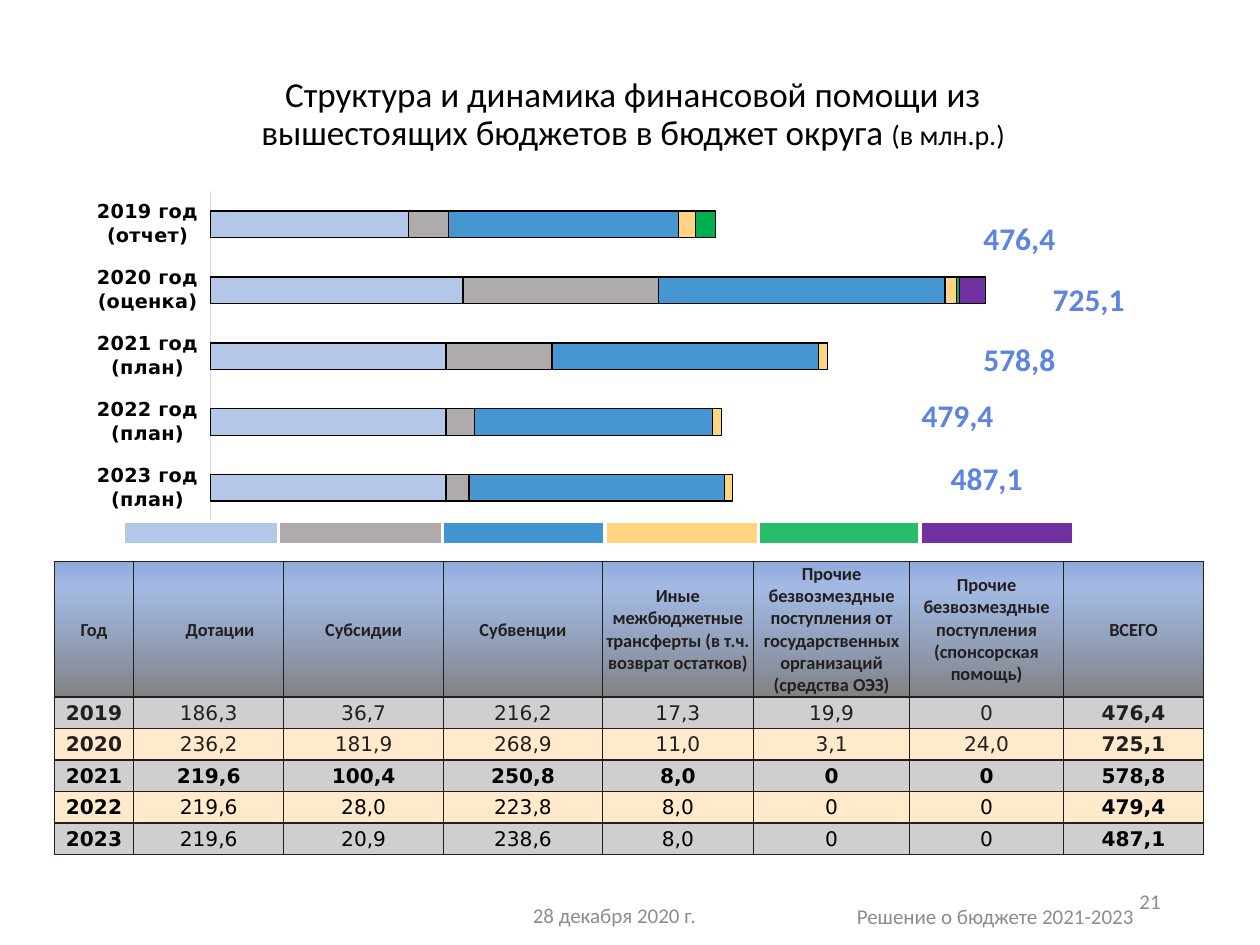
from lxml import etree
from pptx import Presentation
from pptx.chart.data import CategoryChartData
from pptx.dml.color import RGBColor
from pptx.enum.chart import XL_CHART_TYPE, XL_TICK_LABEL_POSITION, XL_TICK_MARK
from pptx.enum.text import MSO_ANCHOR, PP_ALIGN
from pptx.oxml import parse_xml
from pptx.oxml.ns import nsdecls, qn
from pptx.util import Pt

LEFT, CENTER, RIGHT = PP_ALIGN.LEFT, PP_ALIGN.CENTER, PP_ALIGN.RIGHT
MIDDLE, BOTTOM = MSO_ANCHOR.MIDDLE, MSO_ANCHOR.BOTTOM
BAR_STACKED = XL_CHART_TYPE.BAR_STACKED
NO_TICK, LABELS_LOW = XL_TICK_MARK.NONE, XL_TICK_LABEL_POSITION.LOW

COLORS = {
    "black": "000000", "ink": "231F20", "footer": "8C8C8C", "total": "5D84E2",
    "white": "FFFFFF", "axis": "D9D9D9", "odd": "D0CECE", "even": "FFEACC",
    "grants": "B4C7E7", "subsidies": "AFABAB", "subventions": "0070C0",
    "transfers": "FFCC66", "state": "00B050", "sponsors": "7030A0",
}
BODY, DATA = "Calibri", "DejaVu Sans"

YEARS = ["2023 год (план)", "2022 год (план)", "2021 год (план)",
         "2020 год (оценка)", "2019 год (отчет)"]
# colour name, opacity in the chart, opacity in the legend strip, values
SERIES = [
    ("grants", 100, 100, [82, 82, 82, 88, 69]),
    ("subsidies", 100, 100, [8, 10, 37, 68, 14]),
    ("subventions", 73, 74, [89, 83, 93, 100, 80]),
    ("transfers", 82, 83, [3, 3, 3, 4, 6]),
    ("state", 100, 84, [None, None, None, 1, 7]),
    ("sponsors", 100, 100, [None, None, None, 9, 0]),
]
HEADERS = [
    "Год", "Дотации", "Субсидии", "Субвенции",
    "Иные межбюджетные трансферты (в т.ч. возврат остатков)",
    "Прочие безвозмездные поступления от государственных организаций (средства ОЭЗ)",
    "Прочие безвозмездные поступления (спонсорская помощь)", "ВСЕГО",
]
ROWS = [
    ["2019", "186,3", "36,7", "216,2", "17,3", "19,9", "0", "476,4"],
    ["2020", "236,2", "181,9", "268,9", "11,0", "3,1", "24,0", "725,1"],
    ["2021", "219,6", "100,4", "250,8", "8,0", "0", "0", "578,8"],
    ["2022", "219,6", "28,0", "223,8", "8,0", "0", "0", "479,4"],
    ["2023", "219,6", "20,9", "238,6", "8,0", "0", "0", "487,1"],
]
TOTAL_SPOTS = [(542.9, 121.7), (582.5, 156.2), (542.9, 190.8),
               (507.6, 222.5), (524.2, 258.5)]


def rgb(name):
    return RGBColor.from_string(COLORS[name])


def write(p, text, size=12, font=BODY, color="black", bold=False,
          align=LEFT, shadow=False):
    p.alignment = align
    r = p.add_run()
    r.text = text
    r.font.size, r.font.name, r.font.bold = Pt(size), font, bold
    r.font.color.rgb = rgb(color)
    if shadow:
        r._r.rPr.find(qn("a:solidFill")).addnext(parse_xml(
            f'<a:effectLst {nsdecls("a")}><a:outerShdw blurRad="50800" '
            'dist="38100" dir="5400000"><a:srgbClr val="000000">'
            '<a:alpha val="40000"/></a:srgbClr></a:outerShdw></a:effectLst>'))


def add_box(slide, x, y, w, h, anchor=MIDDLE):
    tf = slide.shapes.add_textbox(Pt(x), Pt(y), Pt(w), Pt(h)).text_frame
    tf.word_wrap = True
    tf.vertical_anchor = anchor
    return tf.paragraphs[0]


def set_fill(fill, parent, color, opacity=100):
    fill.solid()
    fill.fore_color.rgb = rgb(color)
    if opacity < 100:
        clr = parent.find(qn("a:solidFill")).find(qn("a:srgbClr"))
        etree.SubElement(clr, qn("a:alpha")).set("val", str(opacity * 1000))


def set_header_gradient(cell):
    cell._tc.get_or_add_tcPr().append(parse_xml(
        f'<a:gradFill {nsdecls("a")}><a:gsLst>'
        '<a:gs pos="0"><a:srgbClr val="828282"/></a:gs>'
        '<a:gs pos="82000"><a:srgbClr val="82A2DB"><a:alpha val="72000"/></a:srgbClr></a:gs>'
        '<a:gs pos="100000"><a:srgbClr val="8FAADC"/></a:gs>'
        '</a:gsLst><a:lin ang="16200000" scaled="0"/></a:gradFill>'))


def set_borders(cell, color, width):
    for side in ("lnL", "lnR", "lnT", "lnB"):
        cell._tc.get_or_add_tcPr().append(parse_xml(
            f'<a:{side} {nsdecls("a")} w="{Pt(width)}"><a:solidFill>'
            f'<a:srgbClr val="{COLORS[color]}"/></a:solidFill></a:{side}>'))


def add_grid(slide, x, y, widths, heights, line, line_width):
    table = slide.shapes.add_table(
        len(heights), len(widths), Pt(x), Pt(y),
        Pt(sum(widths)), Pt(sum(heights))).table
    table.first_row = table.horz_banding = False
    for col, width in zip(table.columns, widths):
        col.width = Pt(width)
    for row, height in zip(table.rows, heights):
        row.height = Pt(height)
    for cell in table.iter_cells():
        cell.margin_left = cell.margin_right = cell.margin_top = Pt(0.7)
        cell.margin_bottom = 0
        cell.vertical_anchor = MIDDLE
        set_borders(cell, line, line_width)
    return table


def add_bars(slide):
    data = CategoryChartData()
    data.categories = YEARS
    for i, (*_, values) in enumerate(SERIES, 1):
        data.add_series(f"Series {i}", values)
    chart = slide.shapes.add_chart(
        BAR_STACKED, Pt(31), Pt(100.1), Pt(652.3), Pt(272.2), data).chart
    chart.has_legend = chart.has_title = False
    chart.font.size, chart.font.name = Pt(10), BODY
    plot = chart.plots[0]
    plot.gap_width, plot.overlap, plot.vary_by_categories = 150, 100, False
    for ser, (color, opacity, *_) in zip(plot.series, SERIES):
        set_fill(ser.format.fill, ser._element.get_or_add_spPr(), color, opacity)
        ser.format.line.color.rgb = rgb("black")
        ser.format.line.width = Pt(0.75)

    # Axes
    values, cats = chart.value_axis, chart.category_axis
    values.visible = values.has_major_gridlines = False
    values.minimum_scale, values.maximum_scale = 0, 298
    cats.major_tick_mark = cats.minor_tick_mark = NO_TICK
    cats.tick_label_position = LABELS_LOW
    cats.format.line.color.rgb = rgb("axis")
    cats.format.line.width = Pt(0.75)
    font = cats.tick_labels.font
    font.size, font.name, font.bold = Pt(11), DATA, True
    font.color.rgb = rgb("black")

    # Fixed inner plot area
    area = chart._chartSpace.chart.plotArea
    for old in area.findall(qn("c:layout")):
        area.remove(old)
    area.insert(0, parse_xml(
        f'<c:layout {nsdecls("c")}><c:manualLayout><c:layoutTarget val="inner"/>'
        '<c:xMode val="edge"/><c:yMode val="edge"/><c:x val="0.137"/>'
        '<c:y val="0.034"/><c:w val="0.749"/><c:h val="0.692"/>'
        '</c:manualLayout></c:layout>'))


def add_legend_strip(slide):
    table = add_grid(slide, 70.6, 298.1, [88.6, 93.6, 92.9, 87.8, 92.2, 87.8],
                     [13], "white", 2.25)
    for cell, (color, _, opacity, _) in zip(table.iter_cells(), SERIES):
        set_fill(cell.fill, cell._tc.tcPr, color, opacity)
        end = etree.SubElement(cell.text_frame.paragraphs[0]._p, qn("a:endParaRPr"))
        end.set("sz", "600")


def add_aid_table(slide):
    widths = [45.4, 85.7, 91.4, 90.7, 86.4, 89.3, 87.8, 80.2]
    table = add_grid(slide, 31, 320.8, widths, [77.5] + [18] * len(ROWS), "ink", 0.75)
    for j, text in enumerate(HEADERS):
        cell = table.cell(0, j)
        set_header_gradient(cell)
        write(cell.text_frame.paragraphs[0], text, size=10.5, color="ink",
              bold=True, align=CENTER)
    table.cell(0, 1).margin_left = Pt(13.7)
    for i, row in enumerate(ROWS, 1):
        for j, text in enumerate(row):
            cell = table.cell(i, j)
            set_fill(cell.fill, cell._tc.tcPr, "odd" if i % 2 else "even")
            write(cell.text_frame.paragraphs[0], text, size=11.5, font=DATA,
                  color="ink" if i < 3 else "black", align=CENTER,
                  bold=j in (0, len(row) - 1) or row[0] == "2021")


def main():
    prs = Presentation()
    prs.slide_width, prs.slide_height = Pt(720), Pt(540)
    slide = prs.slides.add_slide(prs.slide_layouts[6])

    # Title
    p = add_box(slide, 36.7, 37.4, 650.2, 56.9)
    p.line_spacing = 0.9
    title = dict(size=20, align=CENTER, shadow=True)
    write(p, "Структура и динамика финансовой помощи из", **title)
    p.add_line_break()
    write(p, "вышестоящих бюджетов в бюджет округа ", **title)
    write(p, "(в млн.р.)", **{**title, "size": 16})

    # Footer
    for text, x, y, w, align in [
            ("28 декабря 2020 г.", 297.4, 508.3, 180, LEFT),
            ("Решение о бюджете 2021-2023", 478.8, 509, 180, CENTER),
            ("21", 508.3, 500.4, 162, RIGHT)]:
        write(add_box(slide, x, y, w, 28.8), text, color="footer", align=align)

    # Chart, its colour key and the figures
    add_bars(slide)
    add_legend_strip(slide)
    add_aid_table(slide)

    # Totals beside the bars
    for (x, y), row in zip(TOTAL_SPOTS, ROWS):
        write(add_box(slide, x, y, 79.2, 28.8, BOTTOM), row[-1], size=18,
              color="total", bold=True, align=CENTER, shadow=True)

    prs.save("out.pptx")


if __name__ == "__main__":
    main()
